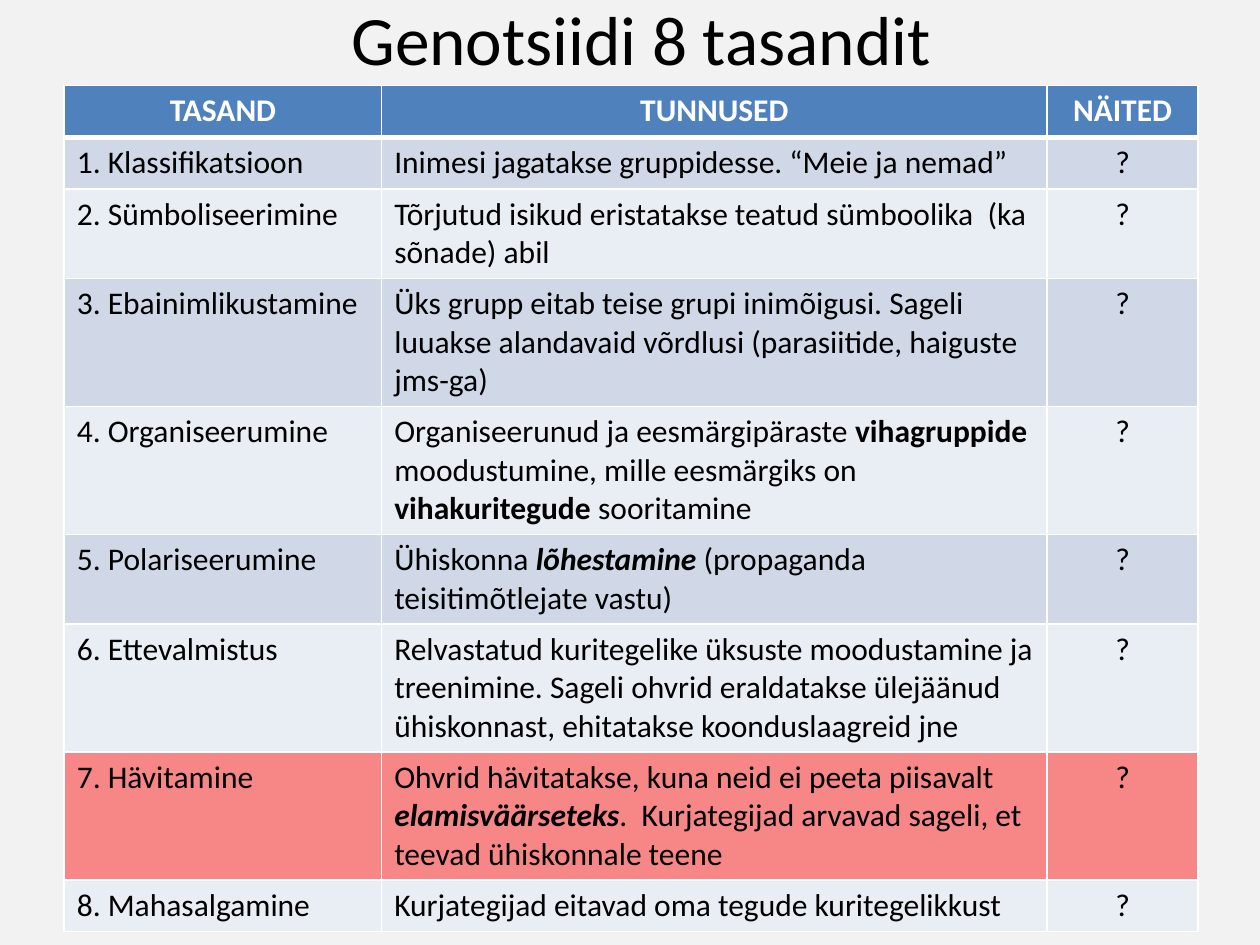
import pptx
import pptx.dml.color
import pptx.enum.text
import pptx.oxml.ns
import pptx.util
from lxml import etree
from pptx.util import Inches

FONT = "Calibri"
TITLE = "Genotsiidi 8 tasandit"
HEADINGS = ["TASAND", "TUNNUSED", "NÄITED"]
EXAMPLE = "?"

# Each level: name, then its features as (text, style) runs; b is bold, i is italic.
LEVELS = [
    ("1. Klassifikatsioon", [("Inimesi jagatakse gruppidesse. “Meie ja nemad”", "")]),
    ("2. Sümboliseerimine", [
        ("Tõrjutud isikud eristatakse teatud sümboolika  (ka sõnade) abil", "")]),
    ("3. Ebainimlikustamine", [
        ("Üks grupp eitab teise grupi inimõigusi. Sageli luuakse alandavaid "
         "võrdlusi (parasiitide, haiguste jms-ga)", "")]),
    ("4. Organiseerumine", [
        ("Organiseerunud ja eesmärgipäraste ", ""),
        ("vihagruppide", "b"),
        (" moodustumine, mille eesmärgiks on ", ""),
        ("vihakuritegude ", "b"),
        ("sooritamine", "")]),
    ("5. Polariseerumine", [
        ("Ühiskonna ", ""),
        ("lõhestamine ", "bi"),
        ("(propaganda teisitimõtlejate vastu)", "")]),
    ("6. Ettevalmistus", [
        ("Relvastatud kuritegelike üksuste moodustamine ja treenimine. Sageli ohvrid "
         "eraldatakse ülejäänud ühiskonnast, ehitatakse koonduslaagreid jne", "")]),
    ("7. Hävitamine", [
        ("Ohvrid hävitatakse, kuna neid ei peeta piisavalt ", ""),
        ("elamisväärseteks", "bi"),
        (".  Kurjategijad arvavad sageli, et teevad ühiskonnale teene", "")]),
    ("8. Mahasalgamine", [("Kurjategijad eitavad oma tegude kuritegelikkust", "")]),
]

BLACK, WHITE = "000000", "FFFFFF"
BACKGROUND, HEADER = "F2F2F2", "4F81BD"
BANDS = ["D0D8E8", "E9EDF4"]
ALERT, ALERT_OPACITY, ALERT_LEVEL = "FF0000", 44, 7

TABLE_LEFT, TABLE_TOP = 0.51, 0.68
COLUMN_WIDTHS = [2.52, 5.28, 1.2]
ROW_HEIGHT = 0.41

ALIGN = pptx.enum.text.PP_ALIGN


def paint(fill, color, opacity=100):
    fill.solid()
    fill.fore_color.rgb = pptx.dml.color.RGBColor.from_string(color)
    if opacity < 100:
        hue = fill._xPr.find(".//" + pptx.oxml.ns.qn("a:srgbClr"))
        etree.SubElement(hue, pptx.oxml.ns.qn("a:alpha"), val=str(opacity * 1000))


def write(frame, runs, size, color, align):
    page_text = frame.paragraphs[0]
    page_text.alignment = align
    for text, style in runs:
        span = page_text.add_run()
        span.text = text
        span.font.name = FONT
        span.font.size = pptx.util.Pt(size)
        span.font.bold = "b" in style
        span.font.italic = "i" in style
        paint(span.font.fill, color)


def outline(cell, bottom):
    """Draw white cell borders, 1 pt wide except for the given bottom width."""
    properties = cell._tc.get_or_add_tcPr()
    for position, (side, width) in enumerate(
            [("lnL", 1), ("lnR", 1), ("lnT", 1), ("lnB", bottom)]):
        line = etree.Element(pptx.oxml.ns.qn("a:" + side), w=str(pptx.util.Pt(width)))
        fill = etree.SubElement(line, pptx.oxml.ns.qn("a:solidFill"))
        etree.SubElement(fill, pptx.oxml.ns.qn("a:srgbClr"), val=WHITE)
        properties.insert(position, line)


def add_title(page):
    title = page.shapes.title
    title.left, title.top = Inches(0.59), Inches(0)
    title.width, title.height = Inches(9), Inches(0.6)
    frame = title.text_frame
    frame.word_wrap = True
    frame.auto_size = pptx.enum.text.MSO_AUTO_SIZE.NONE
    frame.vertical_anchor = pptx.enum.text.MSO_ANCHOR.MIDDLE
    write(frame, [(TITLE, "")], 39.6, BLACK, ALIGN.CENTER)


def add_levels(page):
    rows = [[[(heading, "b")] for heading in HEADINGS]]
    rows += [[[(name, "")], features, [(EXAMPLE, "")]] for name, features in LEVELS]
    table = page.shapes.add_table(
        len(rows), len(HEADINGS), Inches(TABLE_LEFT), Inches(TABLE_TOP),
        Inches(sum(COLUMN_WIDTHS)), Inches(ROW_HEIGHT * len(rows))).table
    for column, width in zip(table.columns, COLUMN_WIDTHS):
        column.width = Inches(width)
    for level, row in enumerate(rows):
        table.rows[level].height = Inches(ROW_HEIGHT)
        is_header = level == 0
        for index, runs in enumerate(row):
            cell = table.cell(level, index)
            centred = is_header or index == len(row) - 1
            write(cell.text_frame, runs, 18, WHITE if is_header else BLACK,
                  ALIGN.CENTER if centred else ALIGN.LEFT)
            if is_header:
                paint(cell.fill, HEADER)
            elif level == ALERT_LEVEL:
                paint(cell.fill, ALERT, ALERT_OPACITY)
            else:
                paint(cell.fill, BANDS[(level - 1) % 2])
            outline(cell, bottom=3 if is_header else 1)


def main():
    deck = pptx.Presentation()
    deck.slide_width, deck.slide_height = Inches(10), Inches(7.5)
    page = deck.slides.add_slide(deck.slide_layouts.get_by_name("Title Only"))
    paint(page.background.fill, BACKGROUND)
    add_title(page)
    add_levels(page)
    deck.save("out.pptx")


if __name__ == "__main__":
    main()
